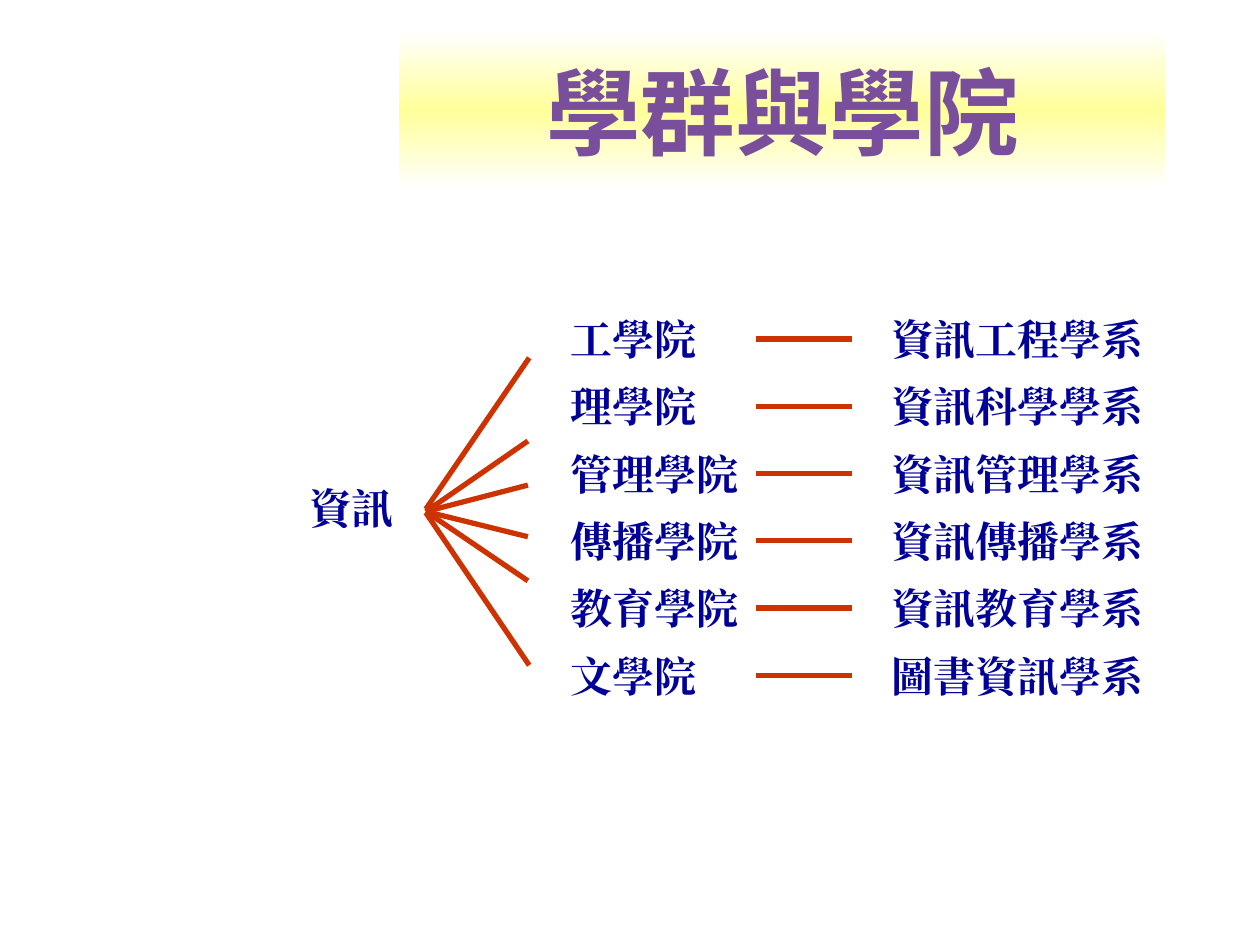
from copy import deepcopy

from lxml import etree
from pptx import Presentation
from pptx import util as u
from pptx.dml.color import RGBColor
from pptx.enum import shapes, text
from pptx.oxml.ns import qn

# college, department, end of its ray, start height of its ray
ROWS = [
    ("工學院", "資訊工程學系", (4.2, 2.84), 4.04),
    ("理學院", "資訊科學學系", (4.19, 3.5), 4.06),
    ("管理學院", "資訊管理學系", (4.19, 3.85), 4.06),
    ("傳播學院", "資訊傳播學系", (4.19, 4.26), 4.06),
    ("教育學院", "資訊教育學系", (4.19, 4.61), 4.06),
    ("文學院", "圖書資訊學系", (4.2, 5.28), 4.07),
]
TOP, PITCH, LABEL_H = 2.44, 0.534, 0.5
CHAR_W, INSETS = 1 / 3, 0.2


def color(value):
    return RGBColor.from_string(value)


def write(tf, content, *, size=24, font="Times New Roman", ink="000099",
          align=text.PP_ALIGN.LEFT):
    p = tf.paragraphs[0]
    p.alignment = align
    r = p.add_run()
    r.text = content
    r.font.size = u.Pt(size)
    r.font.bold = True
    r.font.color.rgb = color(ink)
    r.font.name = font
    etree.SubElement(r.font._element, qn("a:ea")).set("typeface", font)


class Diagram:
    line_color = "CC3300"
    line_width = 3

    def __init__(self, s):
        self.s = s

    def banner(self, content, x, y, w, h):
        sp = self.s.shapes.add_shape(shapes.MSO_SHAPE.RECTANGLE,
                                     *map(u.Inches, (x, y, w, h)))
        sp.shadow.inherit = False
        sp.line.fill.background()
        sp.fill.gradient()
        sp.fill.gradient_angle = 90
        stops = sp._element.spPr.find(qn("a:gradFill")).find(qn("a:gsLst"))
        stops.append(deepcopy(stops[0]))
        bands = [(0, "FFFFFF"), (0.5, "FFFF99"), (1, "FFFFFF")]
        for stop, (position, tint) in zip(sp.fill.gradient_stops, bands):
            stop.position = position
            stop.color.rgb = color(tint)
        tf = sp.text_frame
        tf.vertical_anchor = text.MSO_ANCHOR.MIDDLE
        write(tf, content, size=54, font="Noto Sans CJK SC", ink="794F9B",
              align=text.PP_ALIGN.CENTER)

    def label(self, content, x, y):
        w = len(content) * CHAR_W + INSETS
        sp = self.s.shapes.add_textbox(*map(u.Inches, (x, y, w, LABEL_H)))
        tf = sp.text_frame
        tf.word_wrap = False
        tf.auto_size = text.MSO_AUTO_SIZE.SHAPE_TO_FIT_TEXT
        write(tf, content)

    def line(self, start, end):
        c = self.s.shapes.add_connector(shapes.MSO_CONNECTOR.STRAIGHT,
                                        *map(u.Inches, (*start, *end)))
        c.line.color.rgb = color(self.line_color)
        c.line.width = u.Pt(self.line_width)
        etree.SubElement(c._element.spPr, qn("a:effectLst"))


def main():
    prs = Presentation()
    prs.slide_width, prs.slide_height = u.Inches(10), u.Inches(7.5)
    d = Diagram(prs.slides.add_slide(prs.slide_layouts[6]))
    d.banner("學群與學院", 3.17, 0.25, 6.08, 1.25)
    d.label("資訊", 2.36, 3.78)
    for i, (college, department, ray_end, ray_y) in enumerate(ROWS):
        y = TOP + i * PITCH
        middle = y + LABEL_H / 2
        d.line((3.38, ray_y), ray_end)
        d.label(college, 4.43, y)
        d.line((6, middle), (6.76, middle))
        d.label(department, 6.98, y)
    prs.save("out.pptx")


if __name__ == "__main__":
    main()
